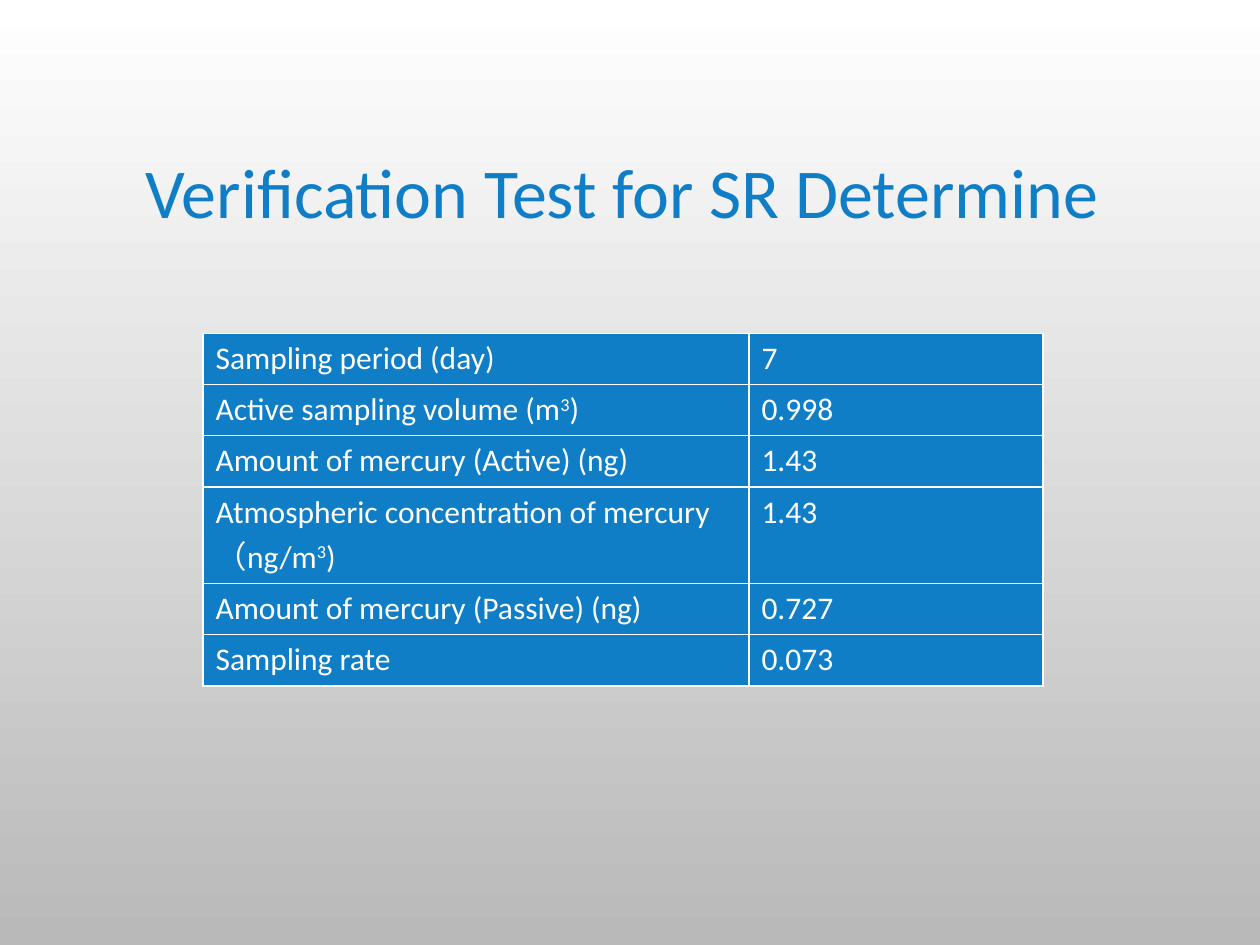
from dataclasses import dataclass

from lxml.etree import SubElement
from pptx import Presentation
from pptx.dml.color import RGBColor as RGB
from pptx.enum.text import MSO_ANCHOR as Anchor, MSO_AUTO_SIZE as AutoSize, PP_ALIGN as Align
from pptx.oxml.ns import qn
from pptx.util import Pt


@dataclass(frozen=True)
class Theme:
    font: str = "Calibri"
    blue: RGB = RGB(0x10, 0x7E, 0xC6)
    white: RGB = RGB(0xFF, 0xFF, 0xFF)
    gray: RGB = RGB(0xB9, 0xB9, 0xB9)
    title_size: float = 40
    cell_size: float = 18


@dataclass(frozen=True)
class Measurement:
    label: str  # text between carets is superscript
    value: str


THEME = Theme()
COL_WIDTHS = (312, 168)
ROW_HEIGHT = 29.25
THIN, REGULAR = 0.75, 1
MEASUREMENTS = [
    Measurement("Sampling period (day)", "7"),
    Measurement("Active sampling volume (m^3^)", "0.998"),
    Measurement("Amount of mercury (Active) (ng)", "1.43"),
    Measurement("Atmospheric concentration of mercury （ng/m^3^)", "1.43"),
    Measurement("Amount of mercury (Passive) (ng)", "0.727"),
    Measurement("Sampling rate", "0.073"),
]


def style_paragraph(p, size: float, color: RGB) -> None:
    p.font.name = THEME.font
    p.font.size = Pt(size)
    p.font.color.rgb = color


def add_border(cell, side: str, width: float) -> None:
    ln = SubElement(cell._tc.get_or_add_tcPr(), qn(f"a:{side}"), w=str(Pt(width)))
    fill = SubElement(ln, qn("a:solidFill"))
    SubElement(fill, qn("a:srgbClr"), val=str(THEME.white))


def fill_cell(cell, text: str, top: float, bottom: float) -> None:
    # Borders come before the fill in the cell properties
    for side, width in (("lnL", REGULAR), ("lnR", REGULAR), ("lnT", top), ("lnB", bottom)):
        add_border(cell, side, width)
    cell.fill.solid()
    cell.fill.fore_color.rgb = THEME.blue
    p = cell.text_frame.paragraphs[0]
    style_paragraph(p, THEME.cell_size, THEME.white)
    for i, part in enumerate(text.split("^")):
        r = p.add_run()
        r.text = part
        if i % 2:
            r._r.get_or_add_rPr().set("baseline", "30000")


def add_measurements(s, rows: list[Measurement], left: float, top: float) -> None:
    frame = s.shapes.add_table(len(rows), len(COL_WIDTHS), Pt(left), Pt(top),
                               Pt(sum(COL_WIDTHS)), Pt(ROW_HEIGHT * len(rows)))
    table = frame.table
    table.first_row = table.horz_banding = False
    for col, width in zip(table.columns, COL_WIDTHS):
        col.width = Pt(width)
    for i, row in enumerate(rows):
        table.rows[i].height = Pt(ROW_HEIGHT)
        # The line below the first row is thinner
        row_top = THIN if i == 1 else REGULAR
        row_bottom = THIN if i == 0 else REGULAR
        for j, text in enumerate((row.label, row.value)):
            fill_cell(table.cell(i, j), text, row_top, row_bottom)


def set_title(s, text: str) -> None:
    sp = s.shapes.title
    sp.left, sp.top, sp.width, sp.height = Pt(54), Pt(49), Pt(612), Pt(126)
    tf = sp.text_frame
    tf.text = text
    tf.word_wrap = True
    tf.auto_size = AutoSize.NONE
    tf.vertical_anchor = Anchor.MIDDLE
    p = tf.paragraphs[0]
    p.alignment = Align.CENTER
    p.line_spacing = 0.9
    style_paragraph(p, THEME.title_size, THEME.blue)


def set_background(s) -> None:
    fill = s.background.fill
    fill.gradient()
    fill.gradient_angle = 270
    for stop, position, color in zip(fill.gradient_stops, (0, 1), (THEME.white, THEME.gray)):
        stop.position = position
        stop.color.rgb = color


def main() -> None:
    prs = Presentation()
    prs.slide_width, prs.slide_height = Pt(720), Pt(540)
    s = prs.slides.add_slide(prs.slide_layouts[5])
    set_background(s)
    set_title(s, "Verification Test for SR Determine ")
    add_measurements(s, MEASUREMENTS, left=116, top=190.5)
    prs.save("out.pptx")


if __name__ == "__main__":
    main()
